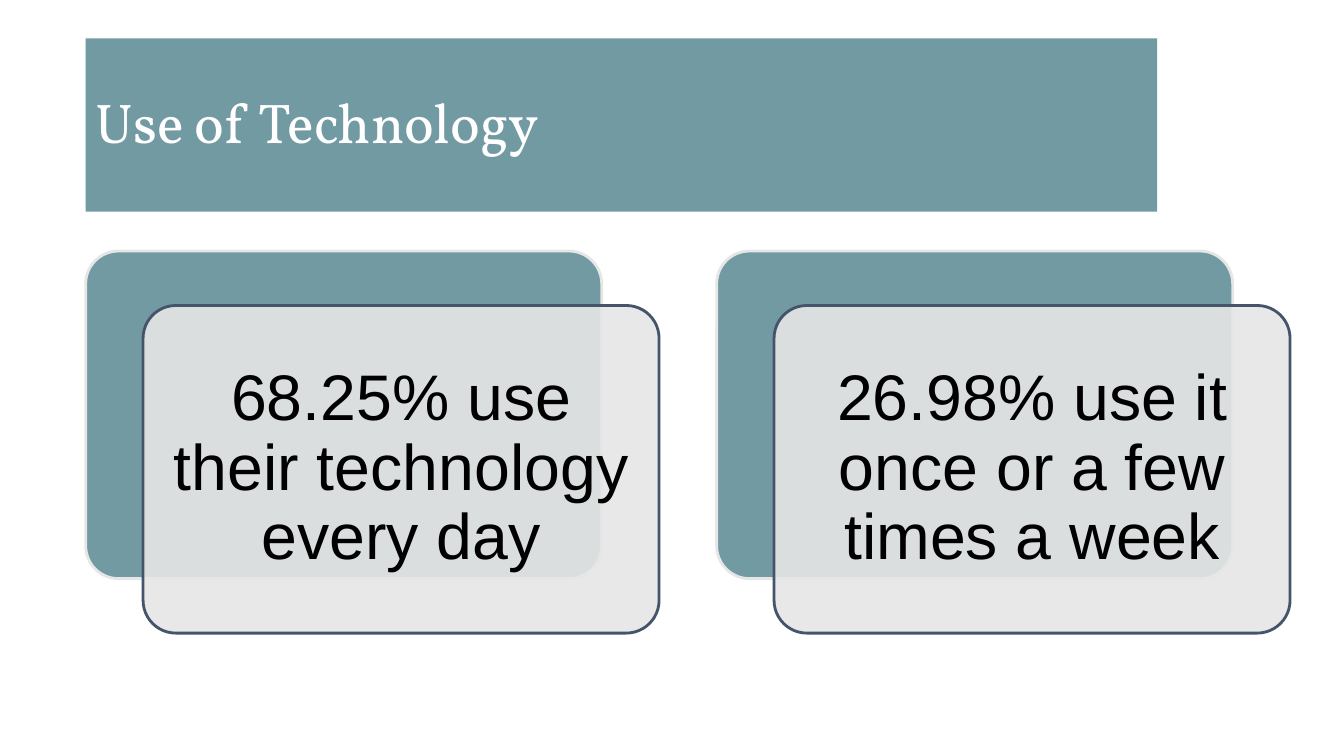
"""Build the "Use of Technology" slide with two layered statistic cards."""
from lxml import etree
from pptx import Presentation
from pptx.dml.color import RGBColor
from pptx.enum.shapes import MSO_SHAPE
from pptx.enum.text import MSO_ANCHOR, PP_ALIGN
from pptx.oxml.ns import qn
from pptx.util import Pt

RECTANGLE = MSO_SHAPE.RECTANGLE
ROUNDED = MSO_SHAPE.ROUNDED_RECTANGLE
MIDDLE = MSO_ANCHOR.MIDDLE
LEFT, CENTER = PP_ALIGN.LEFT, PP_ALIGN.CENTER

TEAL, PALE, NAVY, WHITE, BLACK = "729AA2", "E7E6E6", "44546A", "FFFFFF", "000000"
MARGIN = 61.2
CARD_TOP, CARD_WIDTH, CARD_HEIGHT = 179.3, 368.6, 234
CARD_PITCH = 450.7
FRONT_SHIFT_X, FRONT_SHIFT_Y = 41, 38.9
STATISTICS = [
    "68.25% use their technology every day",
    "26.98% use it once or a few times a week",
]


def color(hex_value):
    return RGBColor.from_string(hex_value)


def write(shape, text, *, font, size, ink, align=LEFT, inset=(7.2, 3.6)):
    frame = shape.text_frame
    frame.word_wrap = True
    frame.vertical_anchor = MIDDLE
    frame.margin_left = frame.margin_right = Pt(inset[0])
    frame.margin_top = frame.margin_bottom = Pt(inset[1])
    paragraph = frame.paragraphs[0]
    paragraph.text = text
    paragraph.alignment = align
    paragraph.line_spacing = 0.9
    paragraph.font.name = font
    paragraph.font.size = Pt(size)
    paragraph.font.color.rgb = color(ink)


class StatisticSlide:
    def __init__(self, slide):
        self.slide = slide

    def panel(self, kind, left, top, width, height, fill, line=None, opacity=None):
        shape = self.slide.shapes.add_shape(kind, Pt(left), Pt(top), Pt(width), Pt(height))
        shape.shadow.inherit = False
        shape.fill.solid()
        shape.fill.fore_color.rgb = color(fill)
        if line:
            shape.line.color.rgb = color(line)
            shape.line.width = Pt(2)
        else:
            shape.line.fill.background()
        if kind == ROUNDED:
            shape.adjustments[0] = 0.1
        if opacity:
            fill_color = shape.fill._xPr.find(qn("a:solidFill"))[0]
            etree.SubElement(fill_color, qn("a:alpha"), val=str(opacity * 1000))
        return shape

    def title(self, text):
        banner = self.panel(RECTANGLE, MARGIN, 27.4, 765.4, 123.8, TEAL)
        write(banner, text, font="Vollkorn", size=40, ink=WHITE)

    def card(self, left, text):
        self.panel(ROUNDED, left, CARD_TOP, CARD_WIDTH, CARD_HEIGHT, TEAL, PALE)
        front = self.panel(ROUNDED, left + FRONT_SHIFT_X, CARD_TOP + FRONT_SHIFT_Y,
                           CARD_WIDTH, CARD_HEIGHT, PALE, NAVY, opacity=90)
        write(front, text, font="Arial", size=46, ink=BLACK, align=CENTER, inset=(13.7, 13.7))


def main():
    deck = Presentation()
    deck.slide_width, deck.slide_height = Pt(960), Pt(540)
    page = StatisticSlide(deck.slides.add_slide(deck.slide_layouts[6]))
    page.title("Use of Technology")
    for index, statistic in enumerate(STATISTICS):
        page.card(MARGIN + index * CARD_PITCH, statistic)
    deck.save("out.pptx")


if __name__ == "__main__":
    main()
